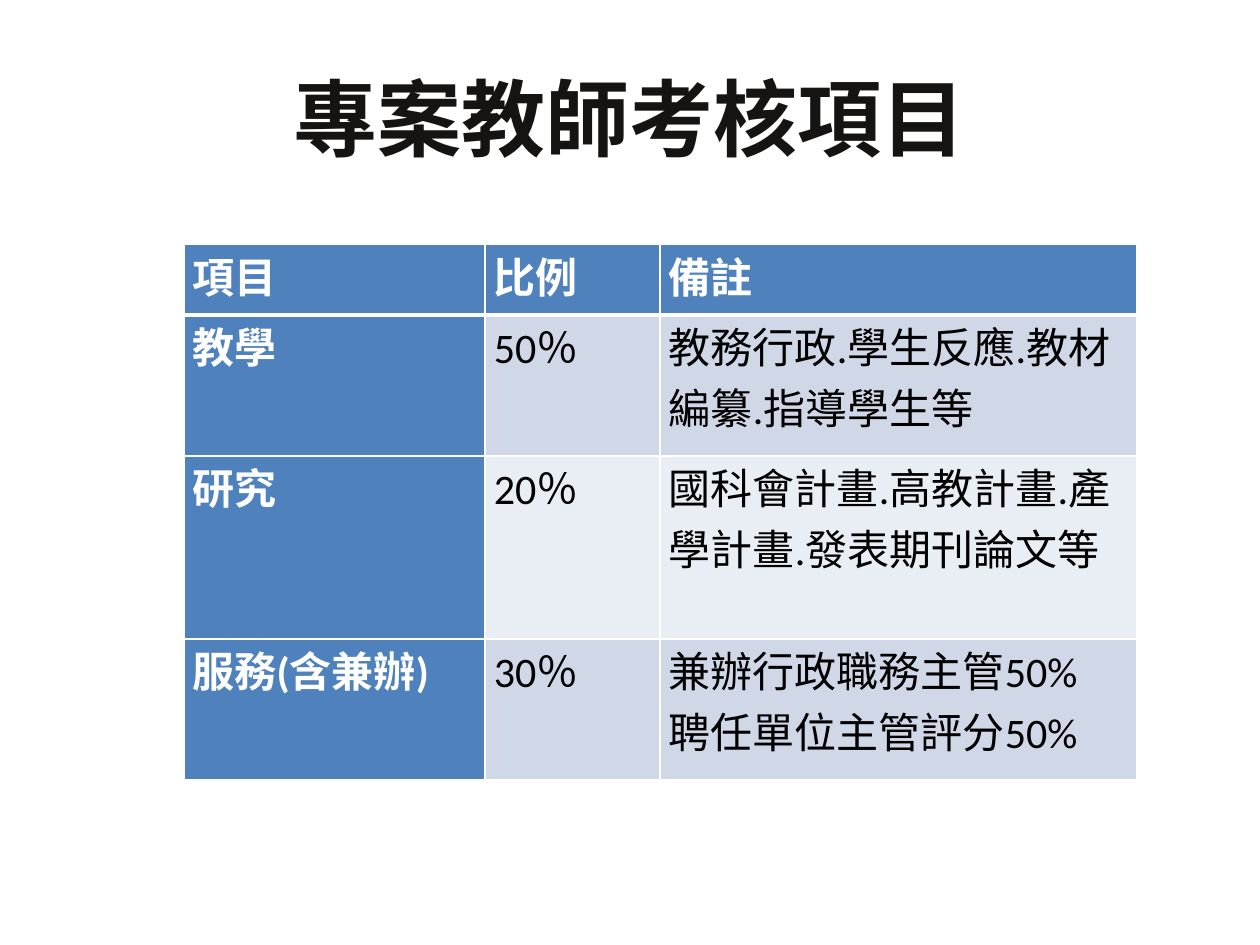
import pptx
import pptx.dml.color
import pptx.enum.text
import pptx.oxml
import pptx.oxml.ns
import pptx.util
from pptx.util import Inches

CJK_FONT = "Noto Sans CJK SC"
BLUE, WHITE, BLACK = "4F81BD", "FFFFFF", "000000"
BANDS = ("D0D8E8", "E9EDF4")


def color(value):
    return pptx.dml.color.RGBColor.from_string(value)


def apply(target, values):
    for name, value in values.items():
        setattr(target, name, value)


class SlideBuilder:
    def __init__(self, slide):
        self.slide = slide
        self.heading = {"name": CJK_FONT, "size": pptx.util.Pt(48), "bold": True}
        self.body = {"name": "Calibri", "size": pptx.util.Pt(24)}
        self.margins = {
            "margin_left": Inches(0.07),
            "margin_right": Inches(0.07),
            "margin_top": 0,
            "margin_bottom": 0,
        }

    def set_text(self, frame, text, style, hue):
        frame.text = text
        for paragraph in frame.paragraphs:
            for run in paragraph.runs:
                apply(run.font, style)
                run.font.color.rgb = color(hue)
                east_asian = pptx.oxml.parse_xml(
                    f'<a:ea {pptx.oxml.ns.nsdecls("a")} typeface="{CJK_FONT}"/>'
                )
                run.font._element.append(east_asian)

    def title(self, text, left, top, width, height):
        heading = self.slide.shapes.title
        apply(heading, {
            "left": Inches(left), "top": Inches(top),
            "width": Inches(width), "height": Inches(height),
        })
        self.set_text(heading.text_frame, text, self.heading, "161412")
        heading.text_frame.vertical_anchor = pptx.enum.text.MSO_ANCHOR.MIDDLE
        heading.text_frame.paragraphs[0].alignment = pptx.enum.text.PP_ALIGN.CENTER

    def borders(self, cell, bottom):
        properties = cell._tc.get_or_add_tcPr()
        for side, points in (("L", 1), ("R", 1), ("T", 1), ("B", bottom)):
            properties.append(pptx.oxml.parse_xml(
                f'<a:ln{side} {pptx.oxml.ns.nsdecls("a")} w="{pptx.util.Pt(points)}">'
                f'<a:solidFill><a:srgbClr val="{WHITE}"/></a:solidFill></a:ln{side}>'
            ))

    def table(self, rows, left, top, widths, heights):
        table = self.slide.shapes.add_table(
            len(rows), len(widths), Inches(left), Inches(top),
            Inches(sum(widths)), Inches(sum(heights)),
        ).table
        for column, width in zip(table.columns, widths):
            column.width = Inches(width)
        for row, height in zip(table.rows, heights):
            row.height = Inches(height)
        for r, texts in enumerate(rows):
            for c, text in enumerate(texts):
                cell = table.cell(r, c)
                is_header = r == 0 or c == 0
                apply(cell, self.margins)
                self.borders(cell, 3 if r == 0 else 1)
                cell.fill.solid()
                cell.fill.fore_color.rgb = color(BLUE if is_header else BANDS[(r - 1) % 2])
                self.set_text(cell.text_frame, text, {**self.body, "bold": is_header},
                              WHITE if is_header else BLACK)


def main():
    deck = pptx.Presentation()
    apply(deck, {"slide_width": Inches(10), "slide_height": Inches(7.5)})
    builder = SlideBuilder(deck.slides.add_slide(deck.slide_layouts[5]))
    builder.title("專案教師考核項目", 0.5, 0.3, 9, 1.25)
    assessment = [
        ("項目", "比例", "備註"),
        ("教學", "50％", "教務行政.學生反應.教材編纂.指導學生等"),
        ("研究", "20％", "國科會計畫.高教計畫.產學計畫.發表期刊論文等"),
        ("服務(含兼辦)", "30％", "兼辦行政職務主管50%\n聘任單位主管評分50%"),
    ]
    builder.table(assessment, 1.46, 1.94, (2.39, 1.39, 3.78), (0.56, 1.12, 1.12, 1.12))
    deck.save("out.pptx")


if __name__ == "__main__":
    main()
